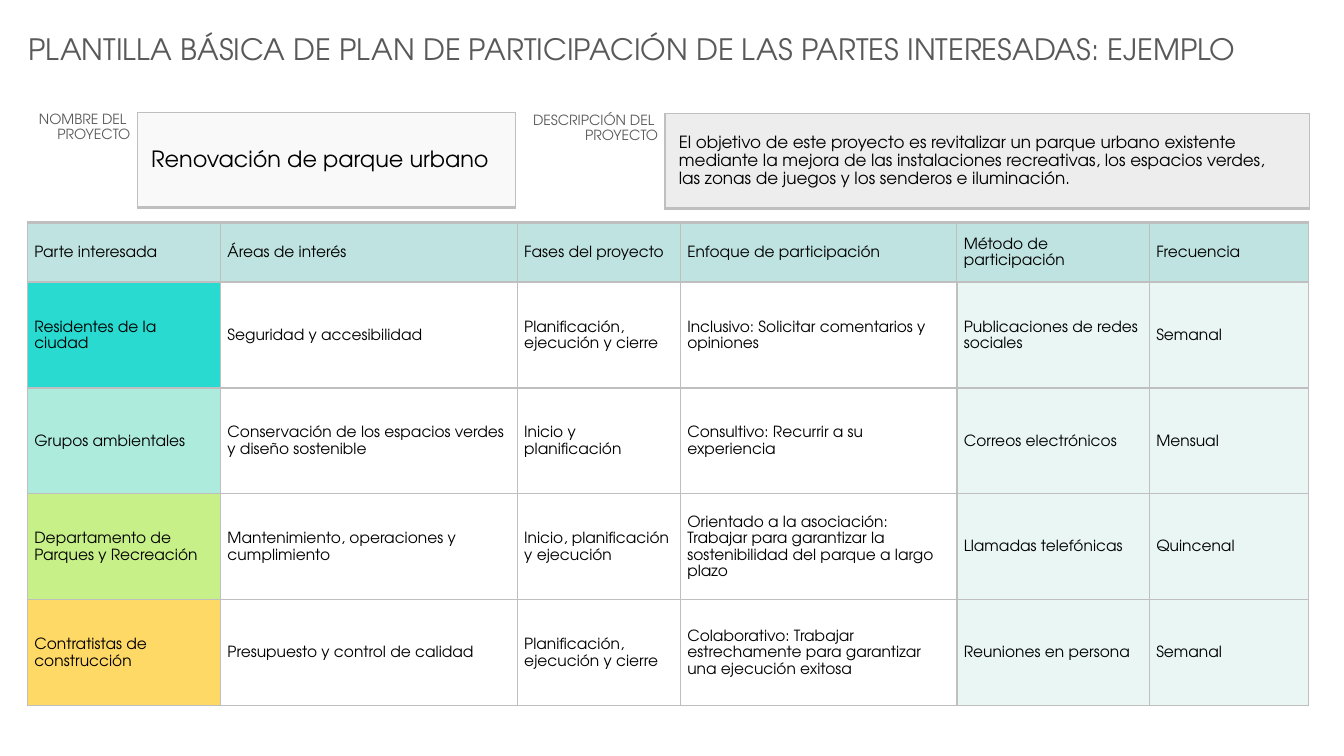
import copy
import dataclasses

import pptx
import pptx.dml.color
import pptx.enum.text
import pptx.oxml
import pptx.oxml.ns
import pptx.util

Pt = pptx.util.Pt
Align = pptx.enum.text.PP_ALIGN
Anchor = pptx.enum.text.MSO_ANCHOR


@dataclasses.dataclass(frozen=True)
class Theme:
    font: str = "TeX Gyre Adventor"
    title_size: int = 21
    name_size: int = 16
    description_size: int = 12
    table_size: int = 11
    label_size: int = 10
    text: str = "000000"
    muted: str = "595959"
    border: str = "BFBFBF"
    header: str = "BEE3E0"
    body: str = "FFFFFF"
    method: str = "E9F6F4"
    name_fill: str = "F9F9F9"
    description_fill: str = "EDEDED"
    stakeholders: tuple = ("28DACF", "ADEBDC", "C8F088", "FFD966")


THEME = Theme()
COLUMN_WIDTHS = (138, 212, 116.5, 197.5, 137.5, 113.5)
HEADER_HEIGHT = 42.5
METHOD_COLUMN = 4
PLAN = (
    ("Parte interesada", "Áreas de interés", "Fases del proyecto",
     "Enfoque de participación", "Método de participación", "Frecuencia"),
    ("Residentes de la ciudad", "Seguridad y accesibilidad",
     "Planificación, ejecución y cierre",
     "Inclusivo: Solicitar comentarios y opiniones",
     "Publicaciones de redes sociales", "Semanal"),
    ("Grupos ambientales", "Conservación de los espacios verdes y diseño sostenible",
     "Inicio y planificación", "Consultivo: Recurrir a su experiencia",
     "Correos electrónicos", "Mensual"),
    ("Departamento de Parques y Recreación", "Mantenimiento, operaciones y cumplimiento",
     "Inicio, planificación y ejecución",
     "Orientado a la asociación: Trabajar para garantizar la sostenibilidad "
     "del parque a largo plazo",
     "Llamadas telefónicas", "Quincenal"),
    ("Contratistas de construcción", "Presupuesto y control de calidad",
     "Planificación, ejecución y cierre",
     "Colaborativo: Trabajar estrechamente para garantizar una ejecución exitosa",
     "Reuniones en persona", "Semanal"),
)


def write_text(frame, text, size, color=THEME.text, align=Align.LEFT,
               spacing=None, indent=0):
    """Write one paragraph; a newline becomes a line break."""
    frame.word_wrap = True
    paragraph = frame.paragraphs[0]
    paragraph.alignment = align
    paragraph.line_spacing = spacing
    if indent:
        properties = paragraph.runs and None or paragraph._p.get_or_add_pPr()
        properties.set("marL", str(Pt(indent)))
        properties.set("indent", "0")
    for number, line in enumerate(text.split("\n")):
        if number:
            paragraph.add_line_break()
        run = paragraph.add_run()
        run.text = line
        run.font.name = THEME.font
        run.font.size = Pt(size)
        run.font.color.rgb = pptx.dml.color.RGBColor.from_string(color)
    # Line breaks take the size of the text around them
    for line_break in paragraph._p.findall(pptx.oxml.ns.qn("a:br")):
        line_break.append(copy.deepcopy(paragraph.runs[0].font._rPr))


def set_borders(cell, left=0, right=0, top=0, bottom=0):
    """Draw the cell edges; a width of zero hides an edge."""
    for side, width in (("L", left), ("R", right), ("T", top), ("B", bottom)):
        paint = (f'<a:solidFill><a:srgbClr val="{THEME.border}"/></a:solidFill>'
                 if width else "<a:noFill/>")
        cell._tc.get_or_add_tcPr().append(pptx.oxml.parse_xml(
            f'<a:ln{side} {pptx.oxml.ns.nsdecls("a")} w="{Pt(width)}">{paint}</a:ln{side}>'))


def format_cell(cell, text, size, fill=None, borders=None, anchor=Anchor.MIDDLE, **text_format):
    cell.margin_left = cell.margin_right = Pt(5)
    cell.margin_top = cell.margin_bottom = 0
    cell.vertical_anchor = anchor
    set_borders(cell, **(borders or {}))
    if fill:
        cell.fill.solid()
        cell.fill.fore_color.rgb = pptx.dml.color.RGBColor.from_string(fill)
    else:
        cell.fill.background()
    write_text(cell.text_frame, text, size, spacing=1.15, **text_format)


def add_plain_table(slide, box, widths, heights):
    left, top, width, height = map(Pt, box)
    table = slide.shapes.add_table(len(heights), len(widths), left, top, width, height).table
    table.first_row = table.horz_banding = False
    for column, column_width in zip(table.columns, widths):
        column.width = Pt(column_width)
    for row, row_height in zip(table.rows, heights):
        row.height = Pt(row_height)
    return table


def add_title(slide, box, text):
    frame = slide.shapes.add_textbox(*map(Pt, box)).text_frame
    write_text(frame, text, THEME.title_size, color=THEME.muted)


def add_plan_table(slide, box):
    row_height = (box[3] - HEADER_HEIGHT) / (len(PLAN) - 1)
    heights = [HEADER_HEIGHT] + [row_height] * (len(PLAN) - 1)
    table = add_plain_table(slide, box, COLUMN_WIDTHS, heights)
    last_row = len(PLAN) - 1
    for row, texts in enumerate(PLAN):
        for column, text in enumerate(texts):
            if row == 0:
                fill = THEME.header
            elif column == 0:
                fill = THEME.stakeholders[row - 1]
            else:
                fill = THEME.method if column >= METHOD_COLUMN else THEME.body
            # Heavier lines: top edge, bottom edge and start of the method columns
            borders = {
                "left": 1.5 if row and column == METHOD_COLUMN else 1,
                "right": 1.5 if row and column == METHOD_COLUMN - 1 else 1,
                "top": 1 if row else 3,
                "bottom": 1.5 if row == last_row else 1,
            }
            format_cell(table.cell(row, column), text, THEME.table_size, fill, borders)


def add_project_field(slide, box, label, label_width, value, size, fill):
    table = add_plain_table(slide, box, (label_width, box[2] - label_width), (box[3],))
    format_cell(table.cell(0, 0), label, THEME.label_size, borders={"right": 1},
                anchor=Anchor.TOP, color=THEME.muted, align=Align.RIGHT)
    format_cell(table.cell(0, 1), value, size, fill,
                {"left": 1, "right": 1, "top": 1, "bottom": 2.25}, indent=5)


def main():
    presentation = pptx.Presentation()
    presentation.slide_width, presentation.slide_height = Pt(960), Pt(540)
    slide = presentation.slides.add_slide(presentation.slide_layouts[6])
    add_title(slide, (13, 18.7, 886.3, 32.4),
              "PLANTILLA BÁSICA DE PLAN DE PARTICIPACIÓN DE LAS PARTES INTERESADAS: EJEMPLO")
    add_plan_table(slide, (19.5, 159, 915, 345))
    add_project_field(slide, (13, 80.5, 355, 67.7), "NOMBRE DEL \nPROYECTO", 85,
                      "Renovación de parque urbano", THEME.name_size, THEME.name_fill)
    add_project_field(slide, (368, 81.2, 567.3, 67.7), "DESCRIPCIÓN DEL \nPROYECTO", 107,
                      "El objetivo de este proyecto es revitalizar un parque urbano existente "
                      "mediante la mejora de las instalaciones recreativas, los espacios verdes, \n"
                      "las zonas de juegos y los senderos e iluminación.",
                      THEME.description_size, THEME.description_fill)
    presentation.save("out.pptx")


if __name__ == "__main__":
    main()
